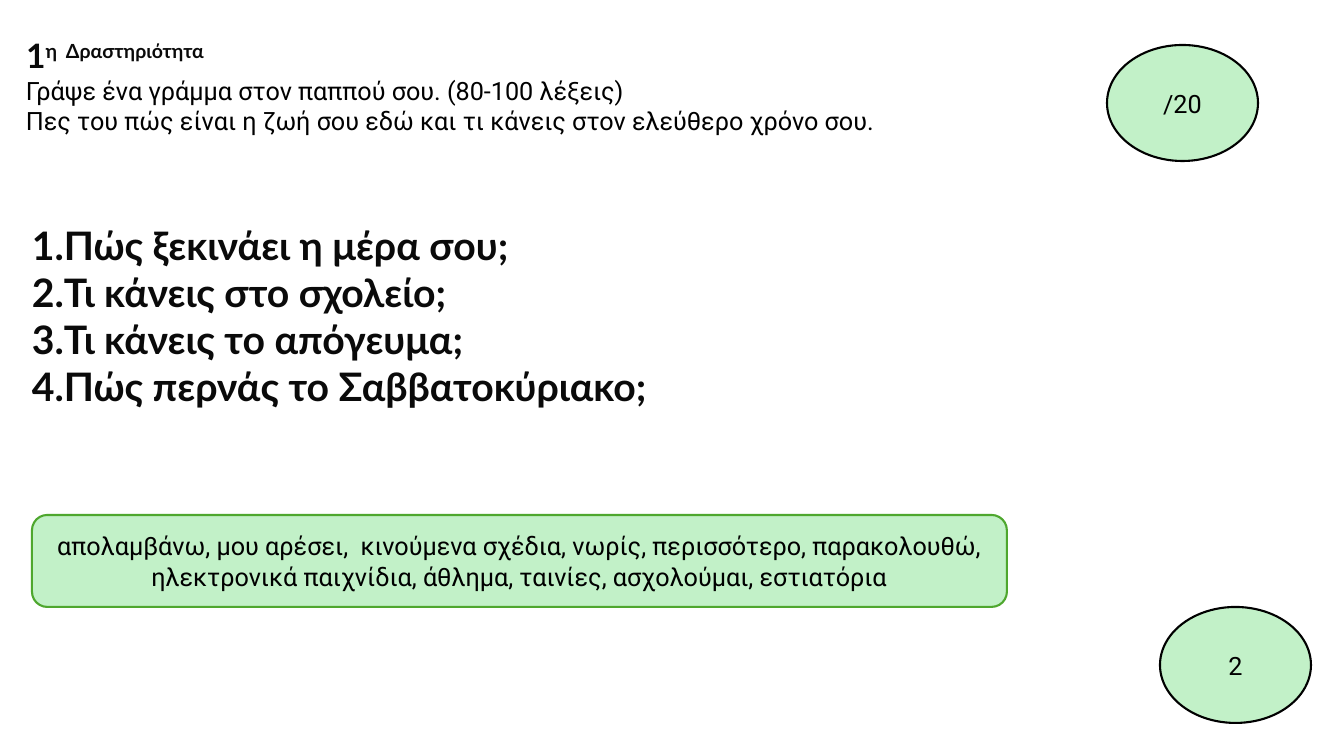
from dataclasses import dataclass

from lxml.etree import SubElement
from pptx import Presentation
from pptx.dml.color import RGBColor
from pptx.enum.shapes import MSO_SHAPE as Shape
from pptx.enum.text import MSO_ANCHOR as Anchor, MSO_AUTO_SIZE as AutoSize, PP_ALIGN as Align
from pptx.oxml.ns import qn
from pptx.util import Pt

PX = 914400 / 100.8


@dataclass(frozen=True)
class Theme:
    ink: str = "0A0A0A"
    black: str = "000000"
    white: str = "FFFFFF"
    mint: str = "C2F1C8"
    green: str = "4EA72E"
    heading_font: str = "Lato"
    body_font: str = "Roboto"
    heading_size: int = 24
    question_size: int = 28
    body_size: int = 18
    line_width: float = 1.5


theme = Theme()


def px(*lengths):
    return [round(length * PX) for length in lengths]


def add_span(para, text, font_name, size, color, bold=False):
    span = para.add_run()
    span.text = text
    span.font.name = font_name
    span.font.size = Pt(size)
    span.font.bold = bold
    span.font.color.rgb = RGBColor.from_string(color)
    return span


deck = Presentation()
deck.slide_width, deck.slide_height = px(1344, 756)
page = deck.slides.add_slide(deck.slide_layouts[5])

title = page.shapes.title
title.left, title.top, title.width, title.height = px(16, 30, 1001, 50)
title.text_frame.auto_size = AutoSize.NONE
title.text_frame.vertical_anchor = Anchor.TOP
title_para = title.text_frame.paragraphs[0]
title_para.alignment = Align.LEFT
heading = (theme.heading_font, theme.heading_size, theme.ink, True)
add_span(title_para, "1", *heading)
ordinal = add_span(title_para, "η  Δραστηριότητα", *heading)
ordinal.font._element.set("baseline", "30000")

task_box = page.shapes.add_textbox(*px(16, 70, 1001, 70))
task_frame = task_box.text_frame
task_frame.word_wrap = True
task_lines = [
    "Γράψε ένα γράμμα στον παππού σου. (80-100 λέξεις)",
    "Πες του πώς είναι η ζωή σου εδώ και τι κάνεις στον ελεύθερο χρόνο σου.",
]
for index, line in enumerate(task_lines):
    para = task_frame.add_paragraph() if index else task_frame.paragraphs[0]
    add_span(para, line, theme.body_font, theme.body_size, theme.black)

question_box = page.shapes.add_shape(Shape.RECTANGLE, *px(32, 172, 1279, 410))
question_box.shadow.inherit = False
question_box.fill.solid()
question_box.fill.fore_color.rgb = RGBColor.from_string(theme.white)
question_box.line.fill.background()
question_frame = question_box.text_frame
question_frame.word_wrap = True
question_frame.vertical_anchor = Anchor.TOP
question_frame.margin_left = question_frame.margin_right = question_frame.margin_bottom = 0
question_frame.margin_top = px(49)[0]
questions = [
    "Πώς ξεκινάει η μέρα σου;",
    "Τι κάνεις στο σχολείο;",
    "Τι κάνεις το απόγευμα;",
    "Πώς περνάς το Σαββατοκύριακο;",
]
for index, question in enumerate(questions):
    para = question_frame.add_paragraph() if index else question_frame.paragraphs[0]
    para.alignment = Align.LEFT
    properties = para._p.get_or_add_pPr()
    properties.set("marL", "0")
    properties.set("indent", "0")
    SubElement(properties, qn("a:buFont"), typeface=theme.heading_font)
    SubElement(properties, qn("a:buAutoNum"), type="arabicPeriod")
    add_span(para, question, theme.heading_font, theme.question_size, theme.ink, True)

word_bank = (
    "απολαμβάνω, μου αρέσει,  κινούμενα σχέδια, νωρίς, περισσότερο, παρακολουθώ, "
    "ηλεκτρονικά παιχνίδια, άθλημα, ταινίες, ασχολούμαι, εστιατόρια"
)
panels = [
    (Shape.OVAL, (1107, 45, 151, 116), theme.black, "/20"),
    (Shape.OVAL, (1160, 607, 151, 116), theme.black, "2"),
    (Shape.ROUNDED_RECTANGLE, (32, 515, 975, 92), theme.green, word_bank),
]
for kind, bounds, outline, text in panels:
    panel = page.shapes.add_shape(kind, *px(*bounds))
    panel.shadow.inherit = False
    panel.fill.solid()
    panel.fill.fore_color.rgb = RGBColor.from_string(theme.mint)
    panel.line.color.rgb = RGBColor.from_string(outline)
    panel.line.width = Pt(theme.line_width)
    panel.text_frame.word_wrap = True
    panel.text_frame.vertical_anchor = Anchor.MIDDLE
    para = panel.text_frame.paragraphs[0]
    para.alignment = Align.CENTER
    add_span(para, text, theme.body_font, theme.body_size, theme.black)

deck.save("out.pptx")
